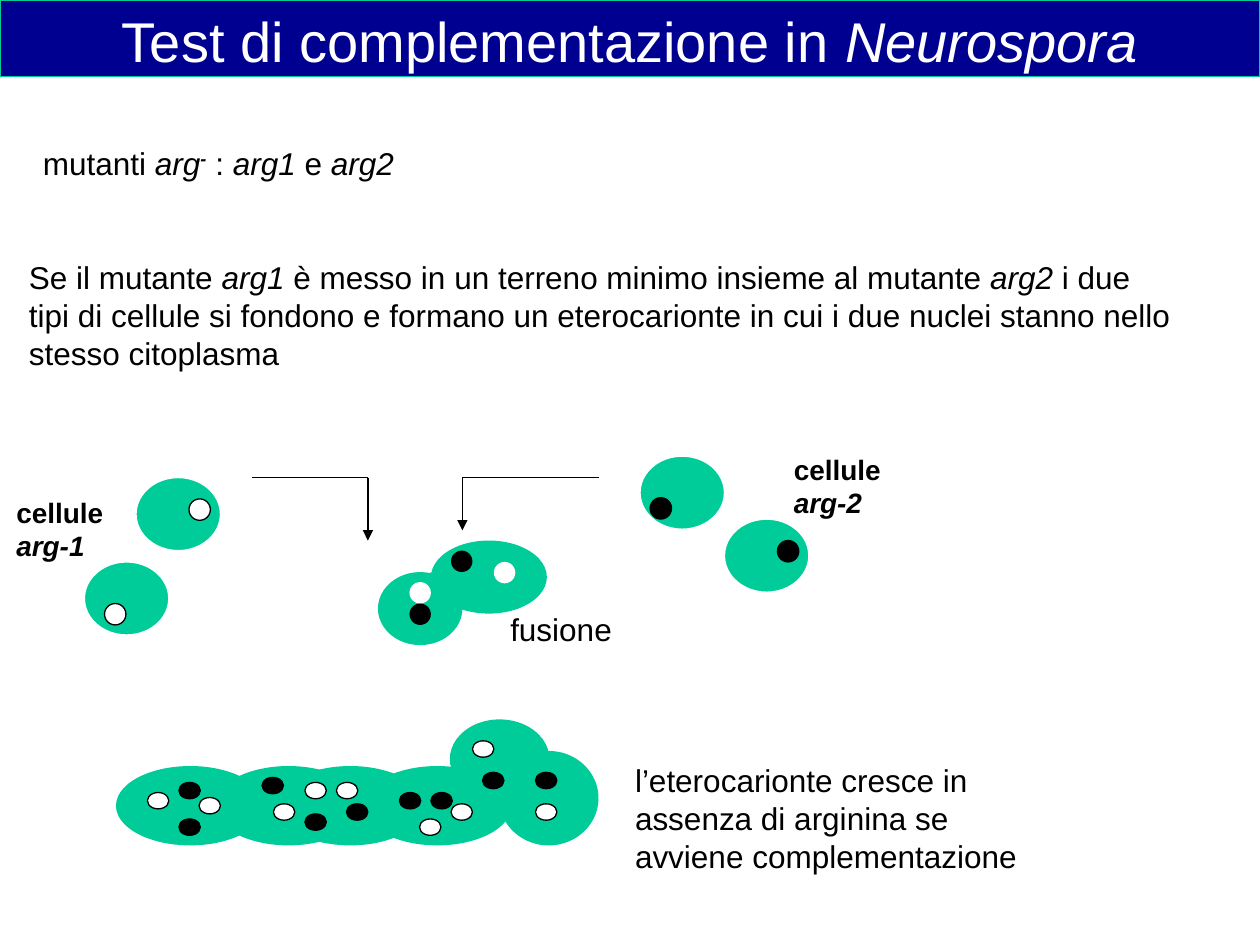
from lxml.etree import SubElement
from pptx import Presentation
from pptx.dml.color import RGBColor
from pptx.enum.shapes import MSO_CONNECTOR, MSO_SHAPE
from pptx.enum.text import MSO_ANCHOR, PP_ALIGN
from pptx.oxml.ns import qn
from pptx.util import Inches, Pt

FONT = "Arial"
BLACK, WHITE, GREEN, NAVY = "000000", "FFFFFF", "00CC99", "000090"
ITALIC, SUPER = "italic", "superscript"


def rgb(color):
    return RGBColor.from_string(color)


def paint(sp, fill, line=None):
    sp.shadow.inherit = False
    sp.fill.solid()
    sp.fill.fore_color.rgb = rgb(fill)
    if line:
        sp.line.color.rgb = rgb(line)
        sp.line.width = Pt(0.75)
    else:
        sp.line.fill.background()


def write(sp, runs, size, color=BLACK, bold=False, align=PP_ALIGN.LEFT):
    """Fill a shape with one paragraph of (text, style) runs."""
    tf = sp.text_frame
    tf.word_wrap = True
    tf.margin_left = tf.margin_right = Inches(0.05)
    tf.margin_top = tf.margin_bottom = Inches(0.05)
    p = tf.paragraphs[0]
    p.alignment = align
    p.font.name, p.font.size, p.font.bold = FONT, Pt(size), bold
    p.font.color.rgb = rgb(color)
    for text, style in runs:
        r = p.add_run()
        r.text = text
        if style:
            r.font.italic = True
        if style == SUPER:
            r.font.bold = True
            r._r.get_or_add_rPr().set("baseline", "30000")


def add_title(s, runs):
    title = s.shapes.title
    title.left, title.top = Inches(0), Inches(0)
    title.width, title.height = Inches(10), Inches(0.61)
    paint(title, NAVY, GREEN)
    write(title, runs, 32, WHITE, align=PP_ALIGN.CENTER)
    title.text_frame.vertical_anchor = MSO_ANCHOR.TOP


def add_text(s, x, y, w, h, runs, size=18, bold=False):
    box = s.shapes.add_textbox(Inches(x), Inches(y), Inches(w), Inches(h))
    write(box, runs, size, bold=bold)


def add_ellipse(s, x, y, w, h, fill, line=None):
    sp = s.shapes.add_shape(MSO_SHAPE.OVAL, Inches(x), Inches(y),
                            Inches(w), Inches(h))
    paint(sp, fill, line)


def add_line(s, start, end, arrow=False):
    cxn = s.shapes.add_connector(MSO_CONNECTOR.STRAIGHT,
                                 *map(Inches, start + end))
    cxn.line.color.rgb = rgb(BLACK)
    cxn.line.width = Pt(0.75)
    if arrow:
        SubElement(cxn.line._get_or_add_ln(), qn("a:tailEnd"), type="triangle")
    SubElement(cxn._element.spPr, qn("a:effectLst"))


def add_bent_arrow(s, start, corner, end):
    add_line(s, start, corner)
    add_line(s, corner, end, arrow=True)


def add_single_cells(s):
    """Draw the unfused cells, each with its one nucleus."""
    for x, y, nucleus_x, nucleus_y, color in [
        (1.08, 3.79, 1.5, 3.96, WHITE),
        (0.67, 4.46, 0.83, 4.79, WHITE),
        (5.08, 3.62, 5.16, 3.95, BLACK),
        (5.75, 4.12, 6.17, 4.29, BLACK),
    ]:
        add_ellipse(s, x, y, 0.67, 0.58, GREEN, WHITE)
        add_ellipse(s, nucleus_x, nucleus_y, 0.17, 0.17, color, BLACK)


def add_fused_cells(s):
    add_ellipse(s, 3, 4.54, 0.67, 0.58, GREEN)
    add_ellipse(s, 3.42, 4.29, 0.92, 0.58, GREEN)
    bridge = [(3.4, 4.55), (3.46, 4.77), (3.51, 4.78), (3.64, 4.86),
              (3.66, 4.74), (3.6, 4.64), (3.49, 4.53)]
    points = [(Inches(x), Inches(y)) for x, y in bridge]
    fb = s.shapes.build_freeform(*points[0])
    fb.add_line_segments(points[1:], close=True)
    paint(fb.convert_to_shape(), GREEN)
    for x, y, color in [(3.25, 4.62, WHITE), (3.58, 4.37, BLACK),
                        (3.25, 4.79, BLACK), (3.92, 4.46, WHITE)]:
        add_ellipse(s, x, y, 0.17, 0.17, color)


def add_heterokaryon(s):
    for x in (0.92, 1.7, 2.19, 2.88):
        add_ellipse(s, x, 6.08, 1.18, 0.63, GREEN)
    add_ellipse(s, 3.57, 5.71, 0.79, 0.63, GREEN)
    add_ellipse(s, 3.96, 5.96, 0.79, 0.75, GREEN)
    nuclei = {
        BLACK: [(1.42, 6.5), (2.08, 6.17), (1.42, 6.21), (2.42, 6.46),
                (2.75, 6.38), (3.17, 6.29), (3.42, 6.29), (3.83, 6.13),
                (4.25, 6.13)],
        WHITE: [(1.17, 6.29), (2.17, 6.38), (1.58, 6.33), (2.42, 6.21),
                (2.67, 6.21), (3.33, 6.5), (3.58, 6.38), (3.75, 5.88),
                (4.25, 6.38)],
    }
    for color, places in nuclei.items():
        for x, y in places:
            add_ellipse(s, x, y, 0.17, 0.13, color, BLACK)


def main():
    prs = Presentation()
    prs.slide_width, prs.slide_height = Inches(10), Inches(7.5)
    s = prs.slides.add_slide(prs.slide_layouts[5])

    add_title(s, [("Test di complementazione in ", None),
                  ("Neurospora", ITALIC)])
    add_text(s, 0.29, 1.09, 6.08, 0.38, [
        ("mutanti ", None), ("arg", ITALIC), ("-", SUPER), (" : ", None),
        ("arg1 ", ITALIC), ("e", None), (" arg2", ITALIC)])
    add_text(s, 0.18, 2, 9.17, 0.97, [
        ("Se il mutante ", None), ("arg1", ITALIC),
        (" è messo in un terreno minimo insieme al mutante ", None),
        ("arg2", ITALIC),
        (" i due tipi di cellule si fondono e formano un eterocarionte "
         "in cui i due nuclei stanno nello stesso citoplasma", None)])

    add_single_cells(s)
    add_fused_cells(s)
    add_heterokaryon(s)
    add_bent_arrow(s, (2, 3.79), (2.92, 3.79), (2.92, 4.29))
    add_bent_arrow(s, (4.75, 3.79), (3.67, 3.79), (3.67, 4.21))

    for x, y, w, strain in [(0.08, 3.88, 1, "arg-1"),
                            (6.25, 3.54, 1.33, "arg-2")]:
        add_text(s, x, y, w, 0.59, [("cellule ", None), (strain, ITALIC)],
                 size=16, bold=True)
    add_text(s, 4, 4.79, 2.33, 0.38, [("fusione", None)])
    add_text(s, 4.99, 5.99, 3.5, 0.97, [
        ("l’eterocarionte cresce in assenza di arginina se avviene "
         "complementazione", None)])

    prs.save("out.pptx")


if __name__ == "__main__":
    main()
